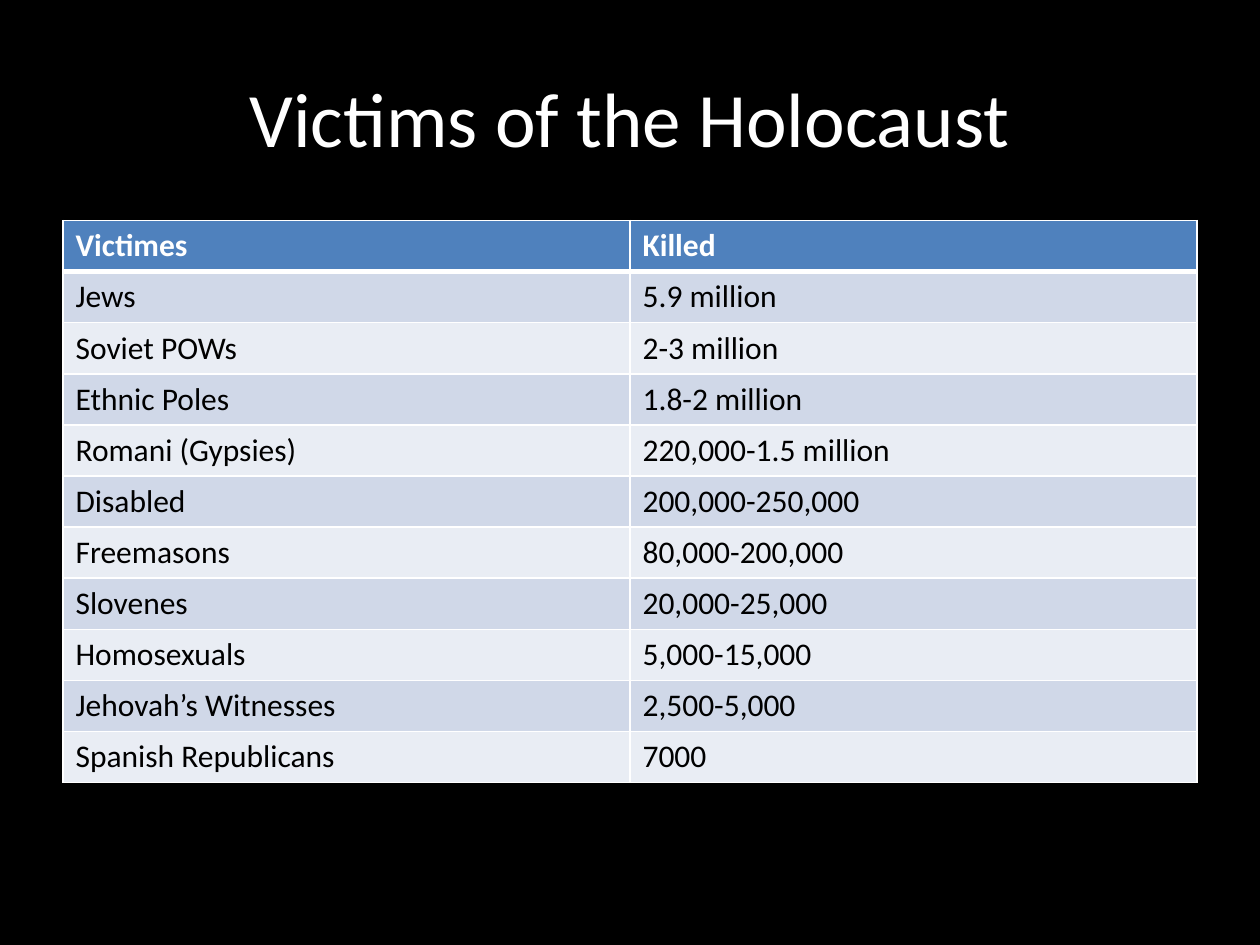
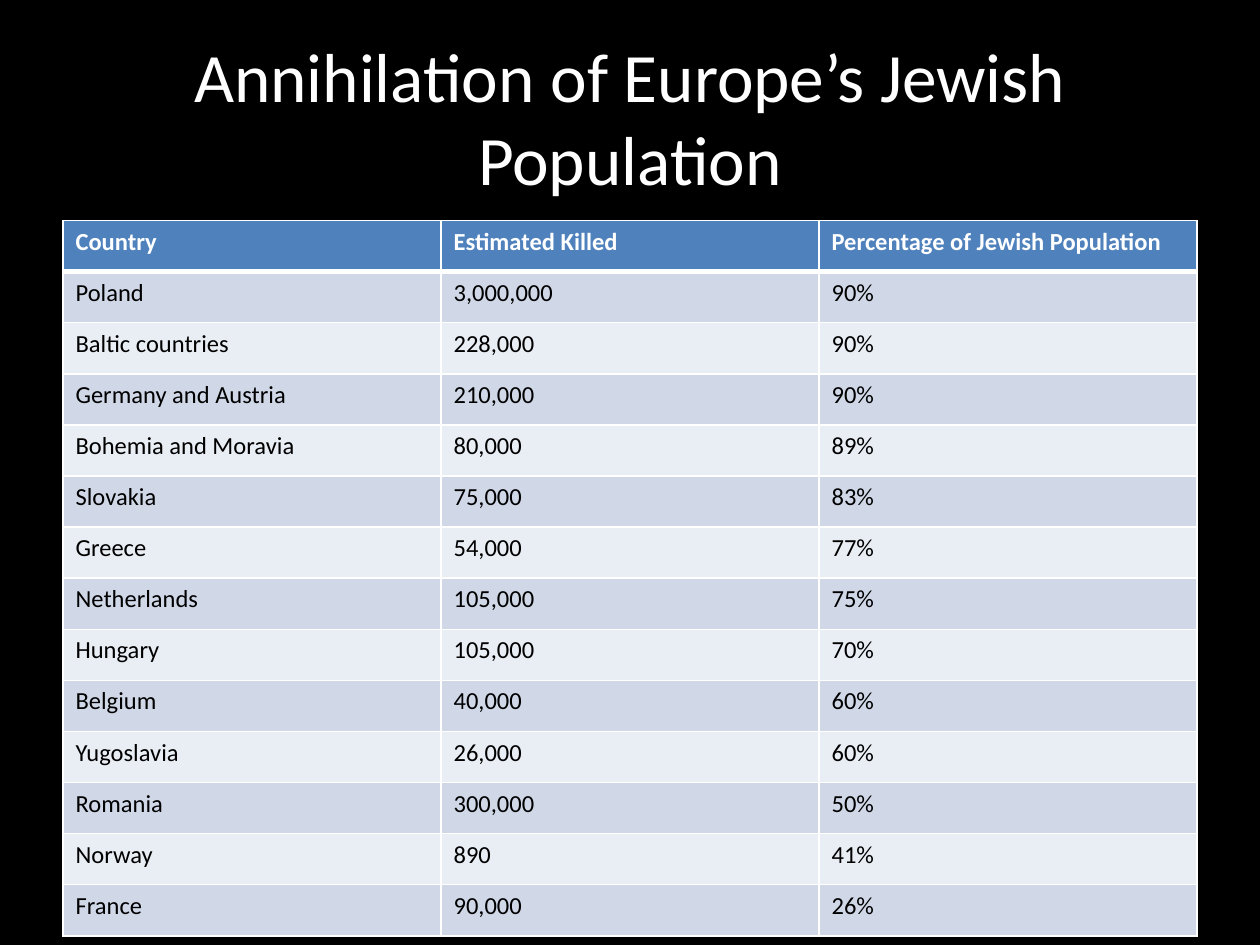
from lxml import etree
from pptx import Presentation
from pptx.dml.color import RGBColor
from pptx.enum.text import MSO_ANCHOR, MSO_AUTO_SIZE, PP_ALIGN
from pptx.oxml.ns import qn
from pptx.util import Pt

MIDDLE = MSO_ANCHOR.MIDDLE
NO_AUTOFIT = MSO_AUTO_SIZE.NONE
CENTER = PP_ALIGN.CENTER
TITLE_ONLY = 5

VICTIMS = [
    ("Victimes", "Killed"),
    ("Jews", "5.9 million"),
    ("Soviet POWs", "2-3 million"),
    ("Ethnic Poles", "1.8-2 million"),
    ("Romani (Gypsies)", "220,000-1.5 million"),
    ("Disabled", "200,000-250,000"),
    ("Freemasons", "80,000-200,000"),
    ("Slovenes", "20,000-25,000"),
    ("Homosexuals", "5,000-15,000"),
    ("Jehovah’s Witnesses", "2,500-5,000"),
    ("Spanish Republicans", "7000"),
]

COUNTRIES = [
    ("Country", "Estimated Killed", "Percentage of Jewish Population"),
    ("Poland", "3,000,000", "90%"),
    ("Baltic countries", "228,000", "90%"),
    ("Germany and Austria", "210,000", "90%"),
    ("Bohemia and Moravia", "80,000", "89%"),
    ("Slovakia", "75,000", "83%"),
    ("Greece", "54,000", "77%"),
    ("Netherlands", "105,000", "75%"),
    ("Hungary", "105,000", "70%"),
    ("Belgium", "40,000", "60%"),
    ("Yugoslavia", "26,000", "60%"),
    ("Romania", "300,000", "50%"),
    ("Norway", "890", "41%"),
    ("France", "90,000", "26%"),
]


def rgb(hex_color):
    return RGBColor.from_string(hex_color)


def apply(target, values):
    for name, value in values.items():
        setattr(target, name, value)


class Deck:
    FONT = "Calibri"
    BLACK, WHITE, HEADER = "000000", "FFFFFF", "4F81BD"
    BANDS = ("E9EDF4", "D0D8E8")
    LEFT, WIDTH = 36, 648
    TITLE_TOP, TITLE_HEIGHT = 21.6, 90
    TABLE_TOP, ROW_HEIGHT = 126, 29.2
    THIN, THICK = 1, 3

    def __init__(self):
        self.prs = Presentation()
        apply(self.prs, {"slide_width": Pt(720), "slide_height": Pt(540)})
        self.slide = None

    def add_slide(self):
        self.slide = self.prs.slides.add_slide(self.prs.slide_layouts[TITLE_ONLY])
        background = self.slide.background.fill
        background.solid()
        background.fore_color.rgb = rgb(self.BLACK)

    def format_font(self, font, size, color, bold=False):
        apply(font, {"name": self.FONT, "size": Pt(size), "bold": bold})
        font.color.rgb = rgb(color)

    def title(self, text, size):
        title = self.slide.shapes.title
        apply(title, {"left": Pt(self.LEFT), "top": Pt(self.TITLE_TOP),
                      "width": Pt(self.WIDTH), "height": Pt(self.TITLE_HEIGHT)})
        apply(title.text_frame, {"text": text, "word_wrap": True,
                                 "auto_size": NO_AUTOFIT, "vertical_anchor": MIDDLE})
        paragraph = title.text_frame.paragraphs[0]
        paragraph.alignment = CENTER
        self.format_font(paragraph.runs[0].font, size, self.WHITE)

    def borders(self, cell, top, bottom):
        # Border lines come before the fill in the cell properties
        properties = cell._tc.get_or_add_tcPr()
        sides = {"L": self.THIN, "R": self.THIN, "T": top, "B": bottom}
        for position, (side, width) in enumerate(sides.items()):
            line = etree.Element(qn(f"a:ln{side}"), w=str(Pt(width)))
            fill = etree.SubElement(line, qn("a:solidFill"))
            etree.SubElement(fill, qn("a:srgbClr"), val=self.WHITE)
            properties.insert(position, line)

    def cell(self, cell, text, row, size):
        is_header = row == 0
        cell.text = text
        cell.fill.solid()
        cell.fill.fore_color.rgb = rgb(self.HEADER if is_header else self.BANDS[row % 2])
        self.format_font(cell.text_frame.paragraphs[0].runs[0].font, size,
                         self.WHITE if is_header else self.BLACK, is_header)
        self.borders(cell, top=self.THICK if row == 1 else self.THIN,
                     bottom=self.THICK if is_header else self.THIN)

    def table(self, records, size):
        table = self.slide.shapes.add_table(
            len(records), len(records[0]), Pt(self.LEFT), Pt(self.TABLE_TOP),
            Pt(self.WIDTH), Pt(self.ROW_HEIGHT * len(records))).table
        for row, record in enumerate(records):
            table.rows[row].height = Pt(self.ROW_HEIGHT)
            for column, text in enumerate(record):
                self.cell(table.cell(row, column), text, row, size)


def main():
    deck = Deck()

    # Victims by group
    deck.add_slide()
    deck.title("Victims of the Holocaust", 44)
    deck.table(VICTIMS, 18)

    # Losses by country
    deck.add_slide()
    deck.title("Annihilation of Europe’s Jewish Population", 39.6)
    deck.table(COUNTRIES, 14)

    deck.prs.save("out.pptx")


if __name__ == "__main__":
    main()
